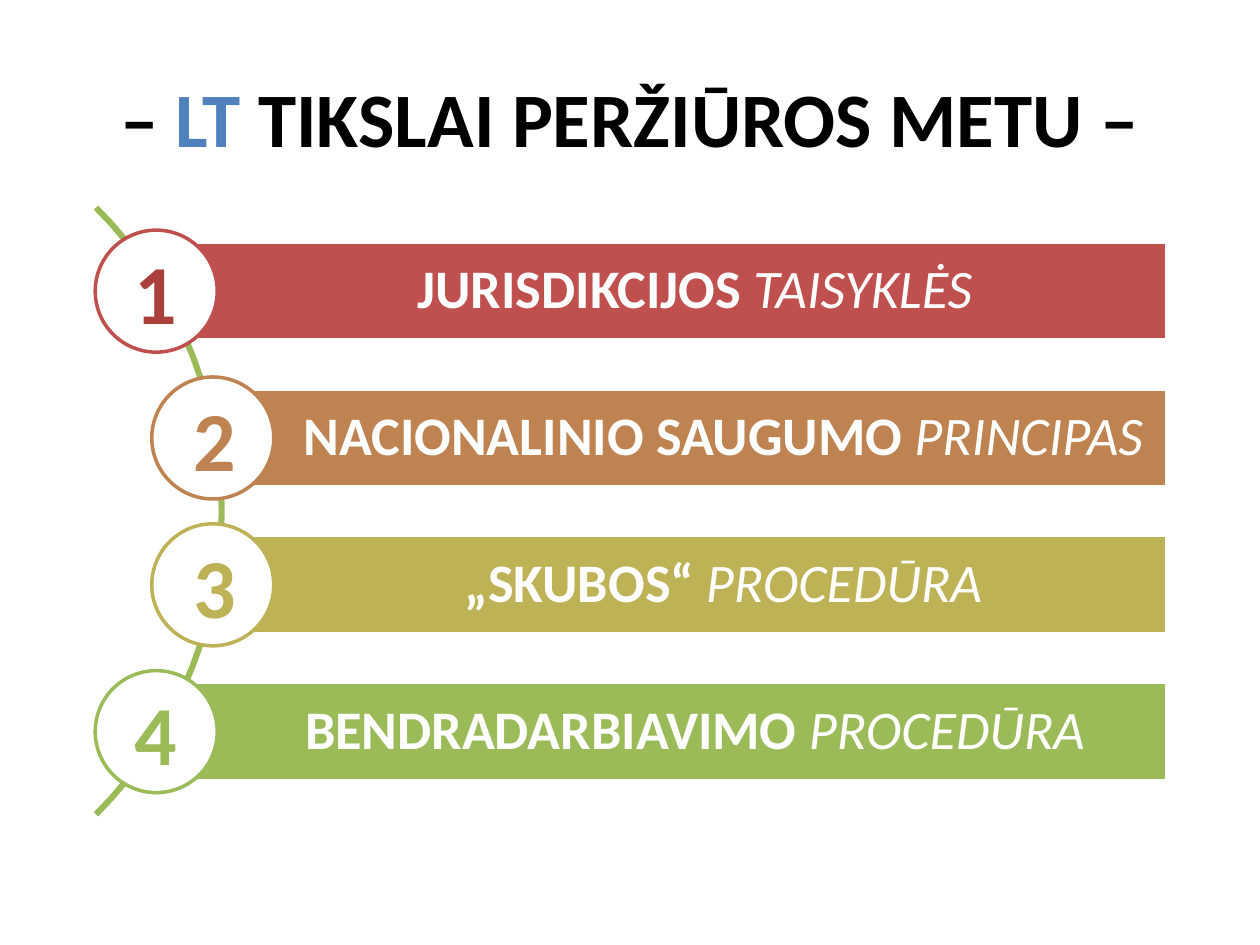
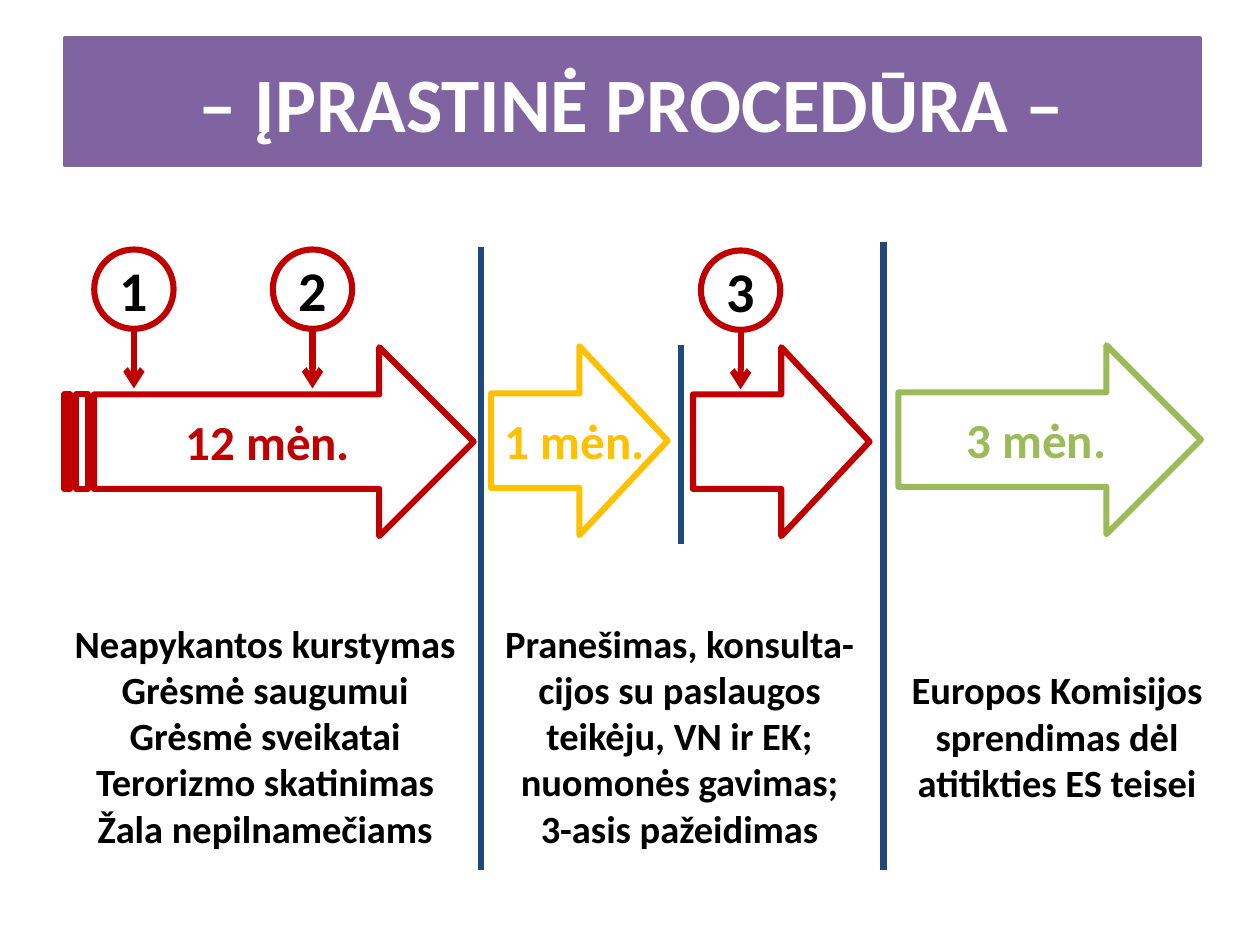
import math
from pptx import Presentation, util as u
from pptx.dml.color import RGBColor
from pptx.enum import shapes as sh, text as tx
from pptx.oxml import parse_xml
from pptx.oxml.ns import nsdecls

FONT = "Calibri"
BLACK, WHITE = "000000", "FFFFFF"
RED, GOLD, GREEN = "C00000", "FFC000", "9BBB59"
NAVY, BLUE, PLUM = "1F497D", "4F81BD", "8064A2"
MID = tx.PP_ALIGN.CENTER

GOALS = [
    ("C0504D", "AA3F3C", "JURISDIKCIJOS ", "TAISYKLĖS"),
    ("BE8351", "BF8351", "NACIONALINIO SAUGUMO ", "PRINCIPAS"),
    ("BDB255", "BDB255", "„SKUBOS“ ", "PROCEDŪRA"),
    (GREEN, GREEN, "BENDRADARBIAVIMO ", "PROCEDŪRA"),
]
STEPS = [
    ("STRIPED_RIGHT_ARROW", (1.3, 7, 8.25, 3.81), RED, "12 mėn.", (0.61, 6.98), MID),
    ("RIGHT_ARROW", (9.9, 6.98, 3.56, 3.81), GOLD, "1 mėn.", (0.03, 3.56), None),
    ("RIGHT_ARROW", (13.97, 7, 3.56, 3.81), RED, "", None, None),
    ("RIGHT_ARROW", (18.11, 6.96, 6.1, 3.81), GREEN, "3 mėn.", (0.18, 5.21), MID),
]
MARKS = [(1.9, 5.03), (5.5, 5.03), (14.13, 5.05)]
RULES = [(9.7, 4.98, 17.53), (13.72, 6.96, 10.97), (17.81, 4.88, 17.53)]
NOTES = [
    ((1.22, 12.37, 8.25, 5.74), ["Neapykantos kurstymas", "Grėsmė saugumui",
     "Grėsmė sveikatai", "Terorizmo skatinimas", "Žala nepilnamečiams"]),
    ((9.65, 12.37, 8.1, 6), ["Pranešimas, konsulta-cijos su paslaugos teikėju, "
     "VN ir EK; nuomonės gavimas;\v3-asis pažeidimas"]),
    ((18.11, 13.31, 6.4, 3.84), ["Europos Komisijos sprendimas dėl atitikties ES teisei"]),
]


def tint(part, color):
    """Give a fill, or a line's fill, a solid colour."""
    part.solid()
    part.fore_color.rgb = RGBColor.from_string(color)


def cms(box):
    """Turn a box of centimetres into lengths."""
    return [u.Cm(n) for n in box]


def style(para, size, color, align=MID):
    """Set the bold type of a whole paragraph."""
    para.alignment = align
    font = para.font
    font.name, font.size, font.bold = FONT, u.Pt(size), True
    tint(font.fill, color)


def pad(frame, left=0, rest=0):
    """Set the insets of a text frame, wrap it and centre it vertically."""
    frame.margin_left = u.Cm(left)
    frame.margin_top = frame.margin_right = frame.margin_bottom = u.Cm(rest)
    frame.word_wrap = True
    frame.vertical_anchor = tx.MSO_ANCHOR.MIDDLE


def shape(slide, kind, box, fill, line, width=2):
    """Add a flat preset shape."""
    item = slide.shapes.add_shape(sh.MSO_SHAPE[kind], *cms(box))
    item.shadow.inherit = False
    if fill:
        tint(item.fill, fill)
    else:
        item.fill.background()
    tint(item.line.fill, line)
    item.line.width = u.Pt(width)
    return item


def rule(slide, left, top, end, color, arrow=False):
    """Draw a vertical line, with an arrowhead below if asked."""
    line = slide.shapes.add_connector(
        sh.MSO_CONNECTOR.STRAIGHT, *cms((left, top, left, end)))
    tint(line.line.fill, color)
    line.line.width = u.Pt(3.5)
    if arrow:
        line.line._get_or_add_ln().append(
            parse_xml(f'<a:tailEnd {nsdecls("a")} type="arrow"/>'))
    line._element.spPr.append(parse_xml(f'<a:effectLst {nsdecls("a")}/>'))


def words(slide, box, lines, size, color, align=MID):
    """Add a text box with one paragraph for each line."""
    frame = slide.shapes.add_textbox(*cms(box)).text_frame
    frame.word_wrap = True
    for i, line in enumerate(lines):
        para = frame.add_paragraph() if i else frame.paragraphs[0]
        para.text = line
        style(para, size, color, align)


def title(slide, box, parts, color):
    """Fill the title placeholder with (text, colour) parts."""
    item = slide.shapes.title
    item.left, item.top, item.width, item.height = cms(box)
    frame = item.text_frame
    frame.auto_size = tx.MSO_AUTO_SIZE.NONE
    frame.vertical_anchor = tx.MSO_ANCHOR.MIDDLE
    para = frame.paragraphs[0]
    style(para, 44, color)
    for text, hue in parts:
        run = para.add_run()
        run.text = text
        if hue != color:
            tint(run.font.fill, hue)
    return item


def curve(slide, left, mid, size):
    """Draw the quarter arc that bulges right around its middle height."""
    turns = [math.radians(a) for a in range(-45, 46, 3)]
    spots = [(u.Cm(left + size * math.cos(t)), u.Cm(mid + size * math.sin(t)))
             for t in turns]
    form = slide.shapes.build_freeform(*spots[0])
    form.add_line_segments(spots[1:], close=False)
    arc = form.convert_to_shape()
    arc.shadow.inherit = False
    arc.fill.background()
    tint(arc.line.fill, GREEN)
    arc.line.width = u.Pt(3.5)


def goal(slide, box, num, color, ink, head, tail):
    """Place a bar with a numbered badge on its left edge."""
    left, top, _, high = box
    bar = shape(slide, "RECTANGLE", box, color, WHITE)
    pad(bar.text_frame, 1.57, 0.23)
    para = bar.text_frame.paragraphs[0]
    style(para, 31, WHITE)
    para.line_spacing = 0.9
    para.add_run().text = head
    run = para.add_run()
    run.text = tail
    run.font.bold, run.font.italic = False, True
    mid = top + high / 2
    shape(slide, "OVAL", (left - 1.23, mid - 1.23, 2.46, 2.46), WHITE, color)
    disc = shape(slide, "OVAL", (left - 0.9, mid - 0.95, 1.8, 1.9), WHITE, WHITE)
    pad(disc.text_frame, 0.1 if num in (2, 3) else 0)
    disc.text_frame.text = str(num)
    style(disc.text_frame.paragraphs[0], 48, ink)


def step(slide, kind, box, color, label, span, align):
    """Place an outlined arrow and its duration."""
    shape(slide, kind, box, None, color, 3.5)
    if label:
        shift, wide = span
        words(slide, (box[0] + shift, box[1] + 1.17, wide, 1.45),
              [label], 28, color, align)


def mark(slide, left, top, num, size=1.6):
    """Place a numbered ring with an arrow pointing down."""
    ring = shape(slide, "OVAL", (left, top, size, size), None, RED, 3.5)
    pad(ring.text_frame)
    ring.text_frame.text = str(num)
    style(ring.text_frame.paragraphs[0], 32, BLACK)
    rule(slide, left + size / 2, top + size, top + size + 1.2, RED, True)


def goals(slide):
    """Build the slide with the four goals."""
    title(slide, (1.27, 0.76, 22.86, 3.18),
          [("– ", BLACK), ("LT ", BLUE), ("TIKSLAI PERŽIŪROS METU –", BLACK)], BLACK)
    curve(slide, -4.18, 10.3, 8.65)
    for i, item in enumerate(GOALS):
        left = 4.29 if i in (1, 2) else 3.15
        goal(slide, (left, 4.88 + 2.96 * i, 23.53 - left, 1.98), i + 1, *item)


def course(slide):
    """Build the slide with the timeline of the procedure."""
    band = title(slide, (1.3, 0.76, 22.89, 2.57),
                 [("– ĮPRASTINĖ PROCEDŪRA –", WHITE)], WHITE)
    tint(band.fill, PLUM)
    tint(band.line.fill, PLUM)
    band.line.width = u.Pt(2)
    for item in STEPS:
        step(slide, *item)
    for num, spot in enumerate(MARKS, 1):
        mark(slide, *spot, num)
    for item in RULES:
        rule(slide, *item, NAVY)
    for box, lines in NOTES:
        words(slide, box, lines, 22, BLACK)


def main():
    """Build and save the deck."""
    deck = Presentation()
    deck.slide_width, deck.slide_height = u.Cm(25.4), u.Cm(19.05)
    for build in (goals, course):
        build(deck.slides.add_slide(deck.slide_layouts[5]))
    deck.save("out.pptx")


if __name__ == "__main__":
    main()
